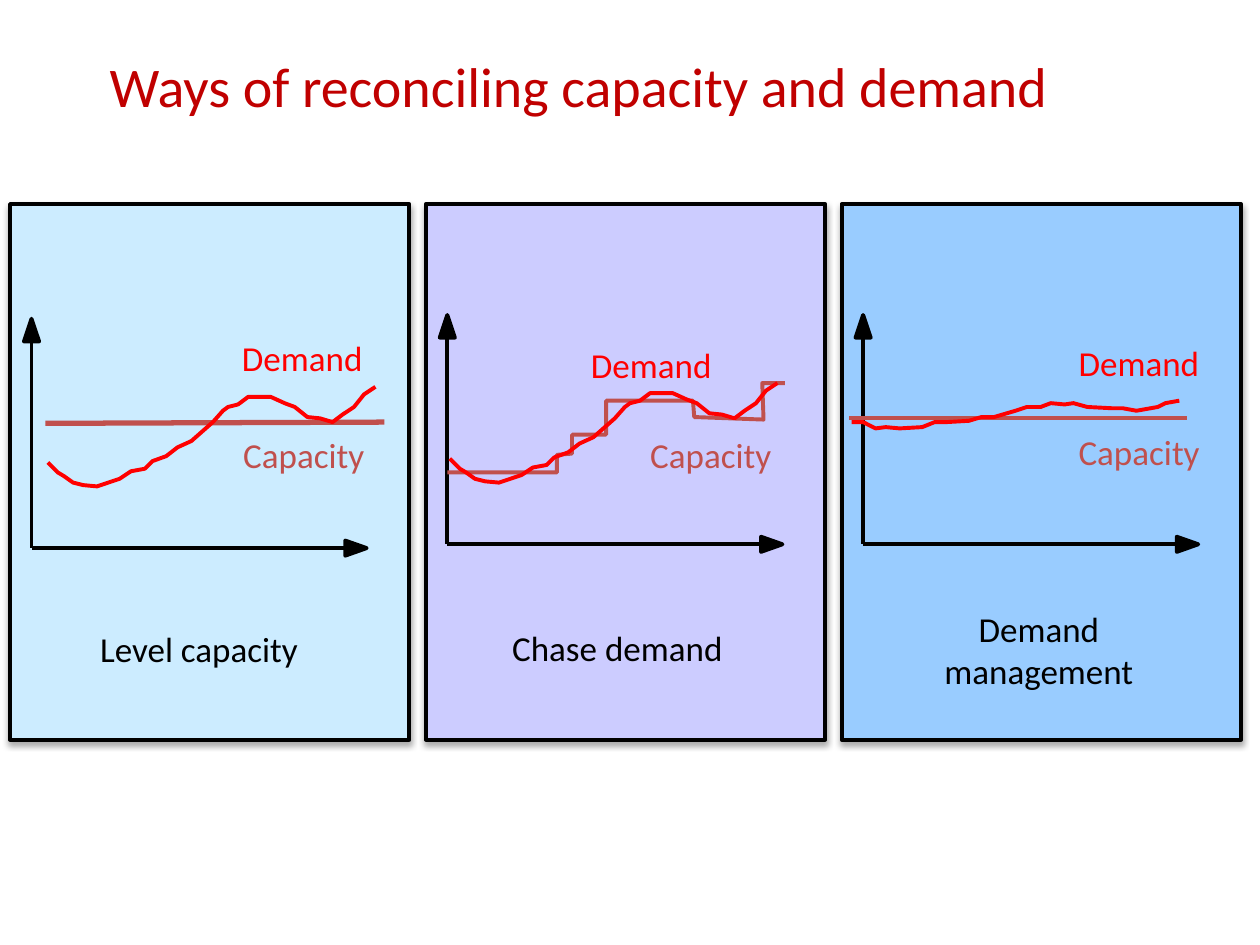
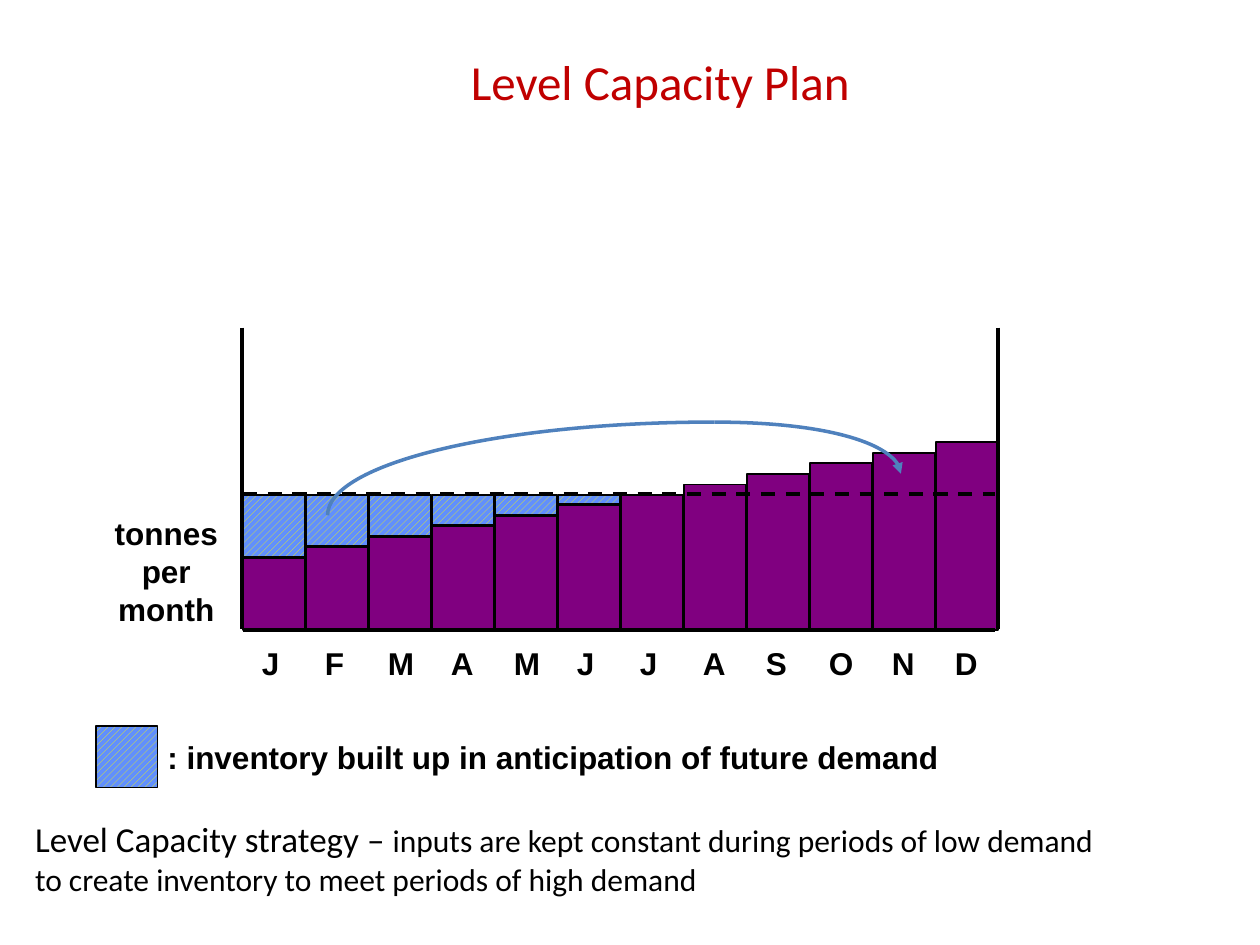
"""Build two slides on reconciling capacity and demand."""
from dataclasses import dataclass

from lxml import etree
from pptx import Presentation, util as u
from pptx.dml.color import RGBColor
from pptx.enum import dml, shapes, text
from pptx.oxml.ns import qn

Point = tuple[float, float]
COLOURS = {
    "title": "C00000", "ink": "000000", "demand": "FF0000", "capacity": "C0504D",
    "level": "CCECFF", "chase": "CCCCFF", "manage": "99CCFF",
    "bar": "800080", "stripe": "FAFD00", "stock": "618FFD", "arrow": "4F81BD",
}
LEVEL_DEMAND = [
    (2.98, 3.07), (2.89, 3.13), (2.81, 3.23), (2.72, 3.29), (2.64, 3.35), (2.54, 3.32),
    (2.44, 3.31), (2.34, 3.23), (2.26, 3.2), (2.15, 3.15), (2.07, 3.15), (1.97, 3.15),
    (1.89, 3.21), (1.81, 3.23), (1.77, 3.26), (1.69, 3.35), (1.52, 3.5), (1.41, 3.55),
    (1.32, 3.62), (1.21, 3.66), (1.15, 3.72), (1.04, 3.74), (0.95, 3.8), (0.77, 3.86),
    (0.66, 3.85), (0.58, 3.83), (0.51, 3.78), (0.46, 3.75), (0.38, 3.67),
]
CHASE_DEMAND = [(x + 3.19, y - 0.03) for x, y in LEVEL_DEMAND]
MANAGED_DEMAND = [
    (9.36, 3.18), (9.25, 3.2), (9.19, 3.23), (9.02, 3.26), (8.91, 3.24), (8.82, 3.24),
    (8.63, 3.23), (8.52, 3.2), (8.45, 3.21), (8.34, 3.2), (8.26, 3.23), (8.15, 3.23),
    (8.06, 3.26), (7.89, 3.31), (7.79, 3.31), (7.69, 3.34), (7.52, 3.35), (7.42, 3.35),
    (7.32, 3.39), (7.14, 3.4), (7.03, 3.39), (6.95, 3.4), (6.85, 3.35), (6.76, 3.35),
]
CHASE_STEPS = [
    (3.55, 3.75), (4.42, 3.75), (4.42, 3.61), (4.54, 3.6), (4.54, 3.45), (4.81, 3.45),
    (4.81, 3.18), (5.5, 3.18), (5.51, 3.31), (6.06, 3.33), (6.05, 3.04), (6.23, 3.04),
]


@dataclass(frozen=True)
class Box:
    """A rectangle in inches."""
    left: float
    top: float
    width: float
    height: float

    def lengths(self) -> list[int]:
        """Return the four lengths for python-pptx."""
        return [u.Inches(n) for n in (self.left, self.top, self.width, self.height)]


@dataclass(frozen=True)
class Span:
    """A run of text with its format."""
    words: str
    size: int = 20
    colour: str = "ink"
    font: str = "Calibri"
    bold: bool = False


@dataclass(frozen=True)
class Panel:
    """One way of reconciling capacity and demand."""
    caption: str
    fill: str
    caption_box: Box
    axis_bottom: float
    demand: list[Point]
    demand_label: Point
    capacity: list[Point]
    capacity_label: Point
    capacity_weight: float = 2.25


PANELS = [
    Panel("Level capacity", "level", Box(0.62, 4.98, 1.92, 0.33), 4.35, LEVEL_DEMAND,
          (1.92, 2.67), [(3.05, 3.35), (0.36, 3.36)], (1.93, 3.44), 3),
    Panel("Chase demand", "chase", Box(3.76, 4.97, 2.28, 0.33), 4.32, CHASE_DEMAND,
          (4.69, 2.73), CHASE_STEPS, (5.16, 3.44)),
    Panel("Demand management", "manage", Box(7.12, 4.82, 2.25, 0.67), 4.32, MANAGED_DEMAND,
          (8.56, 2.71), [(9.42, 3.32), (6.74, 3.32)], (8.56, 3.42)),
]


def rgb(name: str) -> RGBColor:
    """Look up a named colour."""
    return RGBColor.from_string(COLOURS[name])


def write(shape, paras: list[list[Span]], align=None, inset: bool = True) -> None:
    """Fill a shape's text frame run by run."""
    frame = shape.text_frame
    frame.word_wrap = True
    frame.auto_size = text.MSO_AUTO_SIZE.NONE
    frame.vertical_anchor = text.MSO_ANCHOR.TOP
    frame.margin_left = frame.margin_right = u.Inches(0.1 if inset else 0)
    frame.margin_top = frame.margin_bottom = u.Inches(0.05 if inset else 0)
    for index, spans in enumerate(paras):
        para = frame.add_paragraph() if index else frame.paragraphs[0]
        para.alignment = align or text.PP_ALIGN.LEFT
        for span in spans:
            run = para.add_run()
            run.text = span.words
            run.font.size = u.Pt(span.size)
            run.font.name = span.font
            run.font.bold = span.bold
            run.font.color.rgb = rgb(span.colour)


def add_text(page, box: Box, paras: list[list[Span]], align=None, inset: bool = True) -> None:
    """Add a text box."""
    write(page.shapes.add_textbox(*box.lengths()), paras, align, inset)


def add_page(deck, title: str, size: int, box: Box, align=None, inset: bool = True):
    """Add a slide with a formatted title."""
    page = deck.slides.add_slide(deck.slide_layouts[5])
    holder = page.shapes.title
    holder.left, holder.top, holder.width, holder.height = box.lengths()
    write(holder, [[Span(title, size, "title")]], align, inset)
    return page


def outline(shape, colour: str, weight: float) -> None:
    """Set the colour and weight of a line."""
    shape.line.color.rgb = rgb(colour)
    shape.line.width = u.Pt(weight)


def add_line(page, start: Point, end: Point, colour: str = "ink", weight: float = 2.25):
    """Add a straight line without a shadow."""
    line = page.shapes.add_connector(
        shapes.MSO_CONNECTOR.STRAIGHT, *[u.Inches(n) for n in (*start, *end)])
    outline(line, colour, weight)
    etree.SubElement(line._element.spPr, qn("a:effectLst"))
    return line


def add_outline(page, points: list[Point], colour: str, weight: float = 2.25,
                filled: bool = False):
    """Add an open polyline or a filled polygon."""
    corners = [(u.Inches(x), u.Inches(y)) for x, y in points]
    builder = page.shapes.build_freeform(*corners[0])
    builder.add_line_segments(corners[1:], close=filled)
    shape = builder.convert_to_shape()
    shape.shadow.inherit = False
    if filled:
        shape.fill.solid()
        shape.fill.fore_color.rgb = rgb(colour)
    else:
        shape.fill.background()
    outline(shape, colour, weight)
    return shape


def add_curve(page, points: list[Point], colour: str):
    """Add a cubic curve from its end points and two controls."""
    shape = add_outline(page, points, colour, 2)
    segments = list(shape._element.spPr.iter(qn("a:lnTo")))
    track = segments[0].getparent()
    curve = etree.SubElement(track, qn("a:cubicBezTo"))
    for segment in segments:
        curve.append(segment[0])
        track.remove(segment)
    return shape


def add_rectangle(page, box: Box, fill: str, weight: float = 1):
    """Add an outlined rectangle, striped when it stands for stock."""
    shape = page.shapes.add_shape(shapes.MSO_SHAPE.RECTANGLE, *box.lengths())
    shape.shadow.inherit = False
    if fill == "stock":
        shape.fill.patterned()
        shape.fill.pattern = dml.MSO_PATTERN.WIDE_UPWARD_DIAGONAL
        shape.fill.fore_color.rgb = rgb("stripe")
        shape.fill.back_color.rgb = rgb(fill)
    else:
        shape.fill.solid()
        shape.fill.fore_color.rgb = rgb(fill)
    outline(shape, "ink", weight)
    return shape


def add_soft_shadow(shape) -> None:
    """Give a shape a soft shadow below it."""
    effects = shape._element.spPr.find(qn("a:effectLst"))
    shadow = etree.SubElement(effects, qn("a:outerShdw"), blurRad=str(u.Pt(3.5)),
                              dist=str(u.Pt(2.2)), dir="5400000", rotWithShape="0")
    tint = etree.SubElement(shadow, qn("a:srgbClr"), val=COLOURS["ink"])
    etree.SubElement(tint, qn("a:alpha"), val="32000")


def add_axes(page, x: float, y: float) -> None:
    """Draw two axes with arrowheads from an origin."""
    add_line(page, (x, y - 1.74), (x, y))
    add_line(page, (x + 2.65, y), (x, y))
    up = [(x, y - 1.82), (x + 0.06, y - 1.64), (x - 0.06, y - 1.64)]
    right = [(x + 2.66, y), (x + 2.49, y + 0.06), (x + 2.49, y - 0.06)]
    for head in (up, right):
        add_outline(page, head, "ink", filled=True)


def add_panel(page, panel: Panel, shift: float) -> None:
    """Draw one panel with its axes, lines and labels."""
    card = add_rectangle(page, Box(0.08 + shift, 1.62, 3.17, 4.25), panel.fill, 2.25)
    add_soft_shadow(card)
    add_text(page, panel.caption_box, [[Span(panel.caption)]], text.PP_ALIGN.CENTER, False)
    add_axes(page, 0.25 + shift, panel.axis_bottom)
    if len(panel.capacity) == 2:
        add_line(page, *panel.capacity, "capacity", panel.capacity_weight)
    else:
        add_outline(page, panel.capacity, "capacity", panel.capacity_weight)
    add_outline(page, panel.demand, "demand")
    labels = {"Demand": panel.demand_label, "Capacity": panel.capacity_label}
    for label, place in labels.items():
        add_text(page, Box(*place, 1.08, 0.33), [[Span(label, colour=label.lower())]],
                 inset=False)


def build_ways(deck) -> None:
    """Build the slide that compares three ways."""
    page = add_page(deck, "Ways of reconciling capacity and demand", 32,
                    Box(0.87, 0.41, 8.53, 0.54), inset=False)
    for index, panel in enumerate(PANELS):
        add_panel(page, panel, 3.3 * index)


def build_level_plan(deck) -> None:
    """Build the slide with the monthly level capacity plan."""
    page = add_page(deck, "Level Capacity Plan", 28, Box(0.99, 0.36, 8.5, 0.92),
                    text.PP_ALIGN.CENTER)
    left, right, base, level, cell = 1.93, 7.92, 5.0, 3.93, 0.49

    def label(words: str) -> list[list[Span]]:
        """Make a bold chart label."""
        return [[Span(words, 18, font="Arial", bold=True)]]

    for index, month in enumerate("JFMAMJJASOND"):
        x = left + 0.5 * index
        height = 0.57 + 0.92 / 11 * index
        add_rectangle(page, Box(x, base - height, cell, height), "bar")
        stock = base - height - 0.01 - level
        if stock > 0.01:
            add_rectangle(page, Box(x, level, cell, stock), "stock")
        add_text(page, Box(x + 0.05, 5.06, 0.41, 0.4), label(month))
    for x in (left - 0.01, right):
        add_line(page, (x, 2.6), (x, base - 0.01), weight=2)
    add_line(page, (left, base), (7.9, base), weight=2)
    capacity = add_line(page, (left, 3.92), (7.9, 3.92), weight=2)
    capacity.line.dash_style = dml.MSO_LINE.DASH
    add_text(page, Box(0.72, 4.03, 1.2, 1), label("tonnes per month"), text.PP_ALIGN.CENTER)

    add_curve(page, [(2.6, 4.09), (2.6, 3.68), (3.97, 3.35), (5.67, 3.35)], "arrow")
    falling = add_curve(page, [(5.67, 3.35), (6.49, 3.35), (7.15, 3.53), (7.15, 3.76)], "arrow")
    etree.SubElement(falling.line._get_or_add_ln(), qn("a:tailEnd"), type="triangle")

    add_rectangle(page, Box(0.76, 5.76, cell, cell), "stock")
    add_text(page, Box(1.23, 5.81, 6.4, 0.4),
             label(": inventory built up in anticipation of future demand"))
    add_text(page, Box(0.18, 6.44, 8.75, 1.04), [
        [Span("Level Capacity strategy – "),
         Span("inputs are kept constant during periods of low demand", 18)],
        [Span("to create inventory to meet periods of high demand", 18)],
    ])


def main() -> None:
    """Build and save the deck."""
    deck = Presentation()
    deck.slide_width, deck.slide_height = u.Inches(10), u.Inches(7.5)
    build_ways(deck)
    build_level_plan(deck)
    deck.save("out.pptx")


if __name__ == "__main__":
    main()
